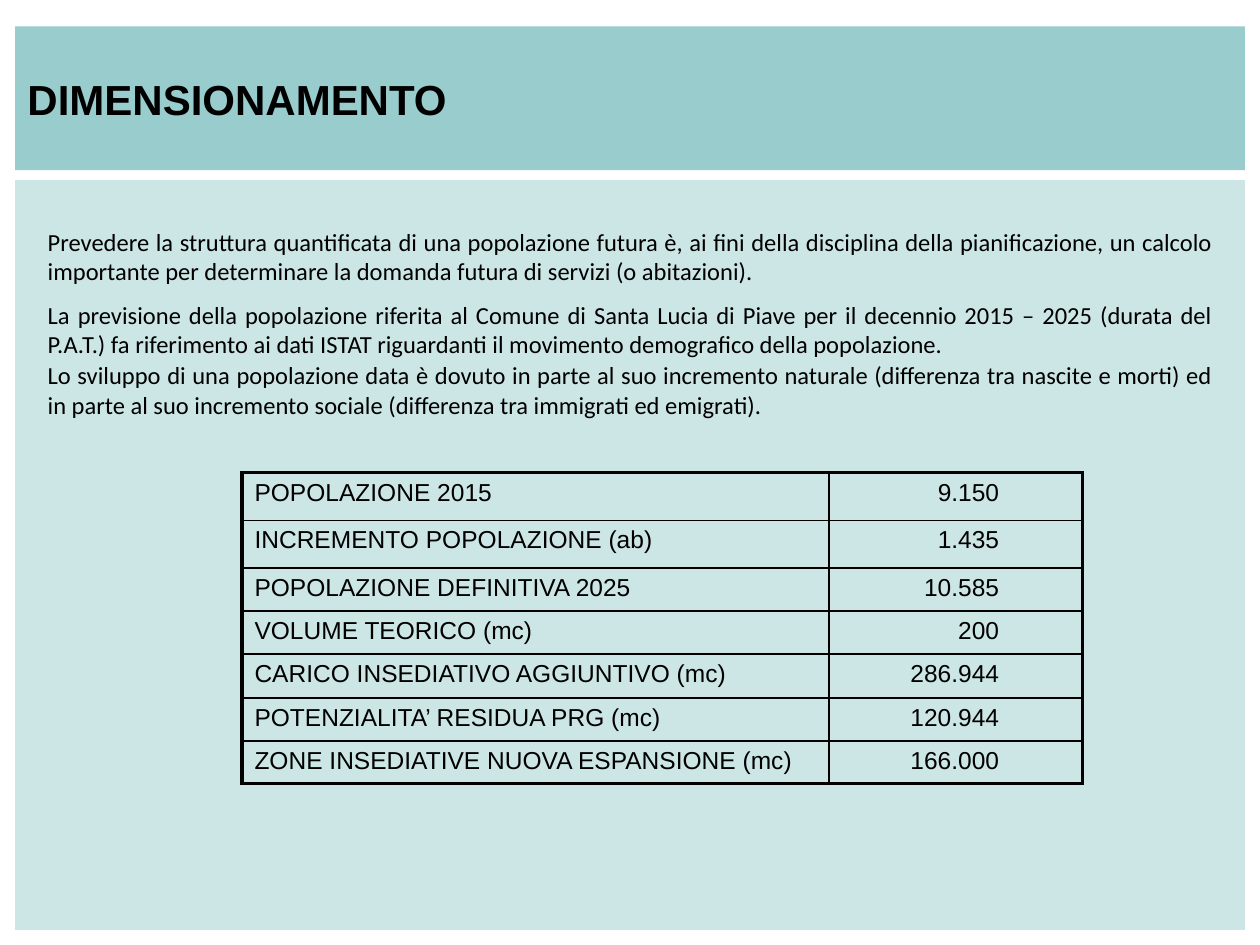
from dataclasses import dataclass

from lxml.etree import SubElement
from pptx import Presentation
from pptx.dml.color import RGBColor
from pptx.enum.shapes import MSO_SHAPE
from pptx.enum.text import MSO_ANCHOR, PP_ALIGN
from pptx.oxml.ns import qn
from pptx.util import Inches, Pt

COLOURS = {"teal": "008080", "black": "000000"}
THIN, THICK = 1, 2.25
PANEL_LEFT, PANEL_WIDTH = 0.12, 9.76


@dataclass(frozen=True)
class Panel:
    top: float
    height: float
    opacity: int


@dataclass(frozen=True)
class Passage:
    top: float
    text: str


@dataclass(frozen=True)
class Figure:
    label: str
    value: str
    height: float


HEADER = Panel(0.21, 1.14, 40)
BODY = Panel(1.43, 5.95, 20)

PASSAGES = [
    Passage(1.75, "Prevedere la struttura quantificata di una popolazione futura è, ai fini della "
                  "disciplina della pianificazione, un calcolo importante per determinare la "
                  "domanda futura di servizi (o abitazioni)."),
    Passage(2.33, "La previsione della popolazione riferita al Comune di Santa Lucia di Piave per "
                  "il decennio 2015 – 2025 (durata del P.A.T.) fa riferimento ai dati ISTAT "
                  "riguardanti il movimento demografico della popolazione."),
    Passage(2.81, "Lo sviluppo di una popolazione data è dovuto in parte al suo incremento "
                  "naturale (differenza tra nascite e morti) ed in parte al suo incremento sociale "
                  "(differenza tra immigrati ed emigrati)."),
]

FIGURES = [
    Figure("POPOLAZIONE 2015", "9.150", 0.38),
    Figure("INCREMENTO POPOLAZIONE (ab)", "1.435", 0.38),
    Figure("POPOLAZIONE DEFINITIVA 2025", "10.585", 0.34),
    Figure("VOLUME TEORICO (mc)", "200", 0.34),
    Figure("CARICO INSEDIATIVO AGGIUNTIVO (mc)", "286.944", 0.35),
    Figure("POTENZIALITA’ RESIDUA PRG (mc)", "120.944", 0.34),
    Figure("ZONE INSEDIATIVE NUOVA ESPANSIONE (mc)", "166.000", 0.34),
]
COLUMN_WIDTHS = [4.66, 2.01]


def style_paragraph(paragraph, text: str, font_name: str, size: float, align=PP_ALIGN.LEFT,
                    bold: bool = False) -> None:
    paragraph.text = text
    paragraph.alignment = align
    font = paragraph.font
    font.name, font.size, font.bold = font_name, Pt(size), bold
    font.color.rgb = RGBColor.from_string(COLOURS["black"])


def add_panel(slide, panel: Panel):
    """Add a translucent teal rectangle; opacity is a percentage."""
    shape = slide.shapes.add_shape(MSO_SHAPE.RECTANGLE, Inches(PANEL_LEFT), Inches(panel.top),
                                   Inches(PANEL_WIDTH), Inches(panel.height))
    shape.shadow.inherit = False
    shape.line.fill.background()
    shape.fill.solid()
    shape.fill.fore_color.rgb = RGBColor.from_string(COLOURS["teal"])
    teal = shape.fill._xPr.find(qn("a:solidFill")).find(qn("a:srgbClr"))
    SubElement(teal, qn("a:alpha"), val=str(panel.opacity * 1000))
    return shape


def add_passage(slide, passage: Passage) -> None:
    box = slide.shapes.add_textbox(Inches(0.28), Inches(passage.top), Inches(9.45), Inches(0.57))
    box.text_frame.word_wrap = True
    style_paragraph(box.text_frame.paragraphs[0], passage.text, "Calibri", 14, PP_ALIGN.JUSTIFY)


def set_borders(cell, widths: dict[str, float]) -> None:
    properties = cell._tc.get_or_add_tcPr()
    for side, width in widths.items():
        line = SubElement(properties, qn(f"a:ln{side}"), w=str(Pt(width)))
        fill = SubElement(line, qn("a:solidFill"))
        SubElement(fill, qn("a:srgbClr"), val=COLOURS["black"])


def add_figures_table(slide, figures: list[Figure]) -> None:
    table = slide.shapes.add_table(
        len(figures), len(COLUMN_WIDTHS), Inches(1.92), Inches(3.75),
        Inches(sum(COLUMN_WIDTHS)), Inches(sum(figure.height for figure in figures))).table
    table.first_row = table.horz_banding = False
    for column, width in zip(table.columns, COLUMN_WIDTHS):
        column.width = Inches(width)

    last_row, last_column = len(figures) - 1, len(COLUMN_WIDTHS) - 1
    for row, figure in enumerate(figures):
        table.rows[row].height = Inches(figure.height)
        for column, text in enumerate((figure.label, figure.value)):
            cell = table.cell(row, column)
            set_borders(cell, {
                "L": THICK if column == 0 else THIN,
                "R": THICK if column == last_column else THIN,
                "T": THICK if row == 0 else THIN,
                "B": THICK if row == last_row else THIN,
            })
            cell.fill.background()
            align = PP_ALIGN.RIGHT if column == last_column else PP_ALIGN.LEFT
            style_paragraph(cell.text_frame.paragraphs[0], text, "Arial", 14, align)
        table.cell(row, last_column).margin_right = Inches(0.66)


def main() -> None:
    presentation = Presentation()
    presentation.slide_width, presentation.slide_height = Inches(10), Inches(7.5)
    slide = presentation.slides.add_slide(presentation.slide_layouts[6])

    header = add_panel(slide, HEADER).text_frame
    header.word_wrap = False
    header.vertical_anchor = MSO_ANCHOR.MIDDLE
    style_paragraph(header.paragraphs[0], "DIMENSIONAMENTO", "Arial", 24, bold=True)

    add_panel(slide, BODY)
    for passage in PASSAGES:
        add_passage(slide, passage)
    add_figures_table(slide, FIGURES)
    presentation.save("out.pptx")


if __name__ == "__main__":
    main()
